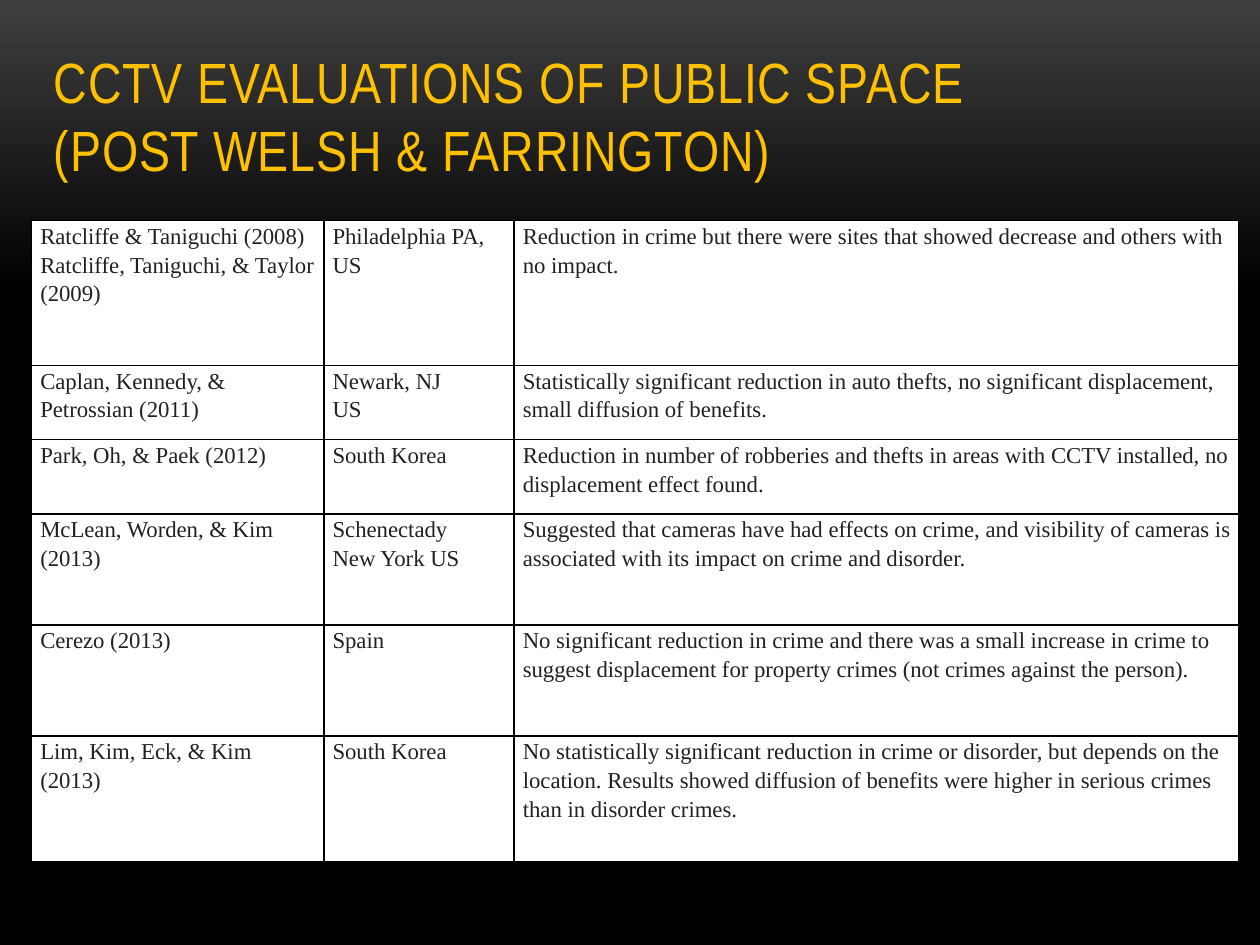
"""Build a slide tabulating CCTV evaluations of public space."""
from copy import deepcopy

from lxml.etree import SubElement
from pptx import Presentation
from pptx.dml.color import RGBColor as RGB
from pptx.enum.text import MSO_ANCHOR as Anchor
from pptx.oxml.ns import qn
from pptx.util import Inches, Pt

COLORS = {"top": "3F3F3F", "base": "000000", "title": "FFC000",
          "cell": "FFFFFF", "text": "1F2123", "border": "000000"}
TITLE_LINES = ["CCTV EVALUATIONS OF PUBLIC SPACE", "(POST WELSH & FARRINGTON)"]
COLUMN_WIDTHS = [2.32, 1.51, 5.75]
ROW_HEIGHTS = [1.15, 0.59, 0.59, 0.88, 0.88, 1]
STUDIES = [
    (["Ratcliffe & Taniguchi (2008)", "Ratcliffe, Taniguchi, & Taylor (2009)"],
     ["Philadelphia PA, US"],
     ["Reduction in crime but there were sites that showed decrease and others "
      "with no impact."]),
    (["Caplan, Kennedy, & Petrossian (2011)"],
     ["Newark, NJ", "US"],
     ["Statistically significant reduction in auto thefts, no significant "
      "displacement, small diffusion of benefits."]),
    (["Park, Oh, & Paek (2012)"],
     ["South Korea"],
     ["Reduction in number of robberies and thefts in areas with CCTV installed, "
      "no displacement effect found."]),
    (["McLean, Worden, & Kim (2013)"],
     ["Schenectady", "New York US"],
     ["Suggested that cameras have had effects on crime, and visibility of cameras "
      "is associated with its impact on crime and disorder."]),
    (["Cerezo (2013)"],
     ["Spain"],
     ["No significant reduction in crime and there was a small increase in crime to "
      "suggest displacement for property crimes (not crimes against the person)."]),
    (["Lim, Kim, Eck, & Kim (2013)"],
     ["South Korea"],
     ["No statistically significant reduction in crime or disorder, but depends on "
      "the location. Results showed diffusion of benefits were higher in serious "
      "crimes than in disorder crimes."]),
]


def add_run(paragraph, text, font_name, size, color):
    run = paragraph.add_run()
    run.text = text
    run.font.name = font_name
    run.font.size = Pt(size)
    run.font.color.rgb = RGB.from_string(COLORS[color])
    return run


def set_borders(cell):
    properties = cell._tc.get_or_add_tcPr()
    for index, side in enumerate(["a:lnL", "a:lnR", "a:lnT", "a:lnB"]):
        line = properties.makeelement(qn(side), {"w": str(Pt(1))})
        fill = SubElement(line, qn("a:solidFill"))
        SubElement(fill, qn("a:srgbClr"), val=COLORS["border"])
        properties.insert(index, line)


prs = Presentation()
prs.slide_width, prs.slide_height = Inches(10), Inches(7.5)
slide = prs.slides.add_slide(prs.slide_layouts[6])

backdrop = slide.background.fill
backdrop.gradient()
backdrop.gradient_angle = 270
for stop, position, color in zip(backdrop.gradient_stops, [0, 0.31], ["top", "base"]):
    stop.position = position
    stop.color.rgb = RGB.from_string(COLORS[color])
stop_list = slide.element.find(".//" + qn("a:gsLst"))
stop_list.append(deepcopy(stop_list[-1]))
backdrop.gradient_stops[2].position = 1

title = slide.shapes.add_textbox(Inches(0.33), Inches(0.25), Inches(9.33), Inches(1.25))
title.text_frame.word_wrap = True
title.text_frame.vertical_anchor = Anchor.BOTTOM
heading = title.text_frame.paragraphs[0]
for index, line_text in enumerate(TITLE_LINES):
    if index:
        heading.add_line_break()
    run = add_run(heading, line_text, "Arial Narrow", 32.4, "title")
    run.font._element.set("spc", "50")

studies = slide.shapes.add_table(
    len(ROW_HEIGHTS), len(COLUMN_WIDTHS), Inches(0.25), Inches(1.75),
    Inches(sum(COLUMN_WIDTHS)), Inches(sum(ROW_HEIGHTS))).table
studies.first_row = studies.horz_banding = False
for column, width in zip(studies.columns, COLUMN_WIDTHS):
    column.width = Inches(width)
for row, height, study in zip(studies.rows, ROW_HEIGHTS, STUDIES):
    row.height = Inches(height)
    for cell, lines in zip(row.cells, study):
        cell.margin_left = cell.margin_right = Inches(0.07)
        cell.margin_top = cell.margin_bottom = 0
        cell.fill.solid()
        cell.fill.fore_color.rgb = RGB.from_string(COLORS["cell"])
        set_borders(cell)
        for index, line_text in enumerate(lines):
            frame = cell.text_frame
            paragraph = frame.add_paragraph() if index else frame.paragraphs[0]
            paragraph.line_spacing = 1.15
            add_run(paragraph, line_text, "Times New Roman", 13, "text")

prs.save("out.pptx")
